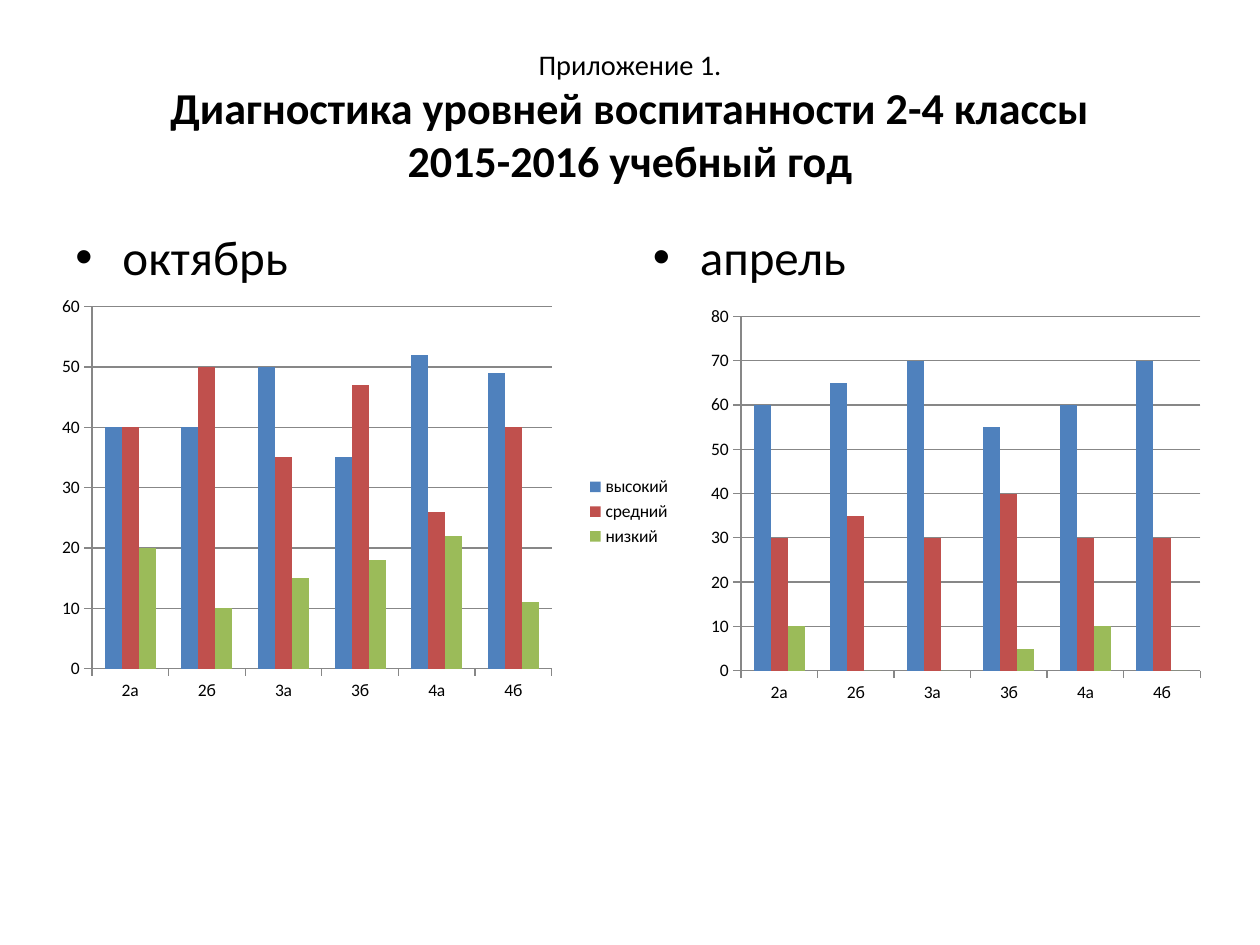
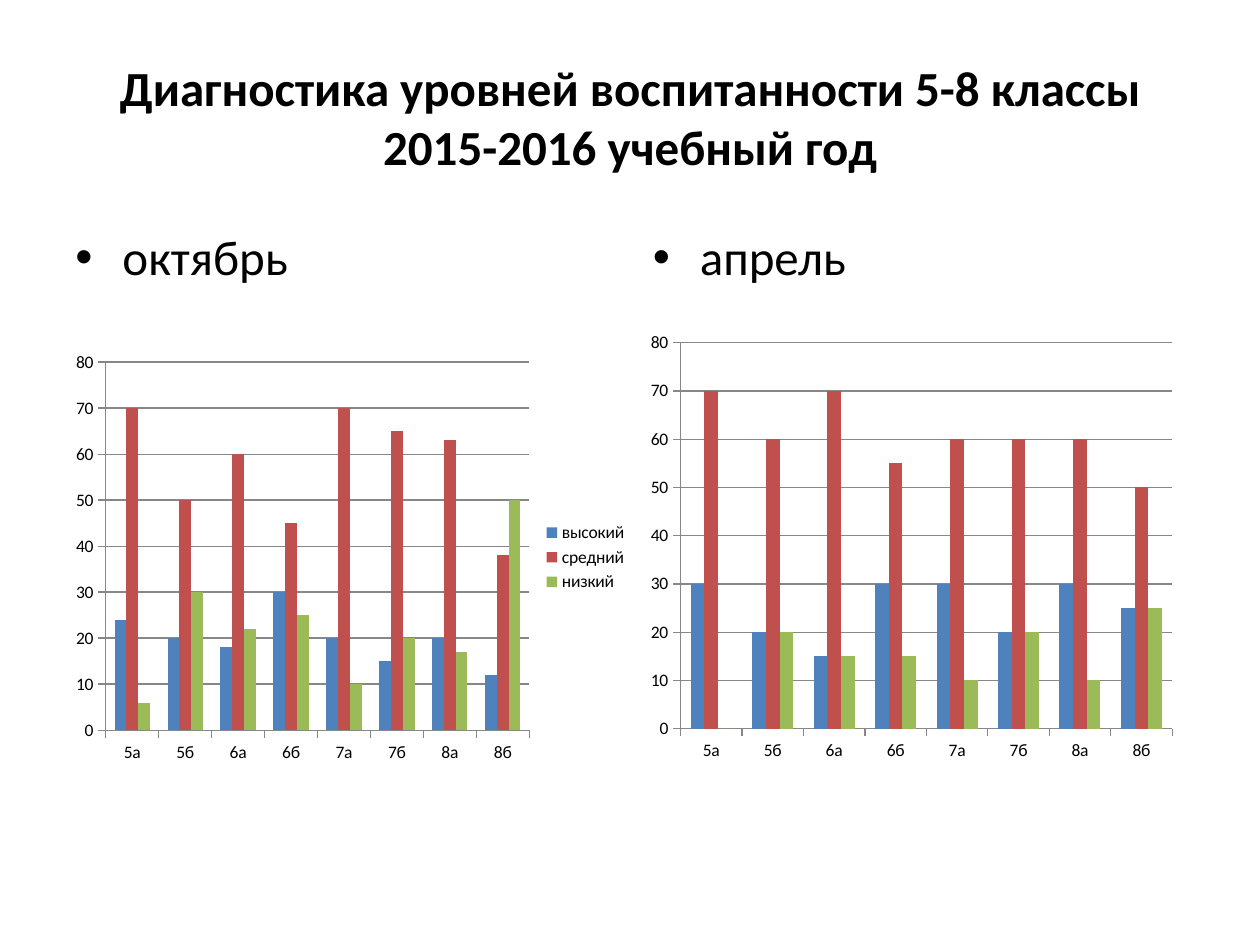
from copy import deepcopy

from lxml import etree
from pptx import Presentation
from pptx.chart.data import CategoryChartData
from pptx.dml.color import RGBColor
from pptx.enum.chart import XL_CHART_TYPE, XL_LEGEND_POSITION, XL_TICK_MARK
from pptx.enum.text import MSO_ANCHOR, MSO_AUTO_SIZE, PP_ALIGN
from pptx.oxml import parse_xml
from pptx.oxml.ns import nsdecls, qn
from pptx.util import Cm, Pt

COLUMNS = XL_CHART_TYPE.COLUMN_CLUSTERED
LEGEND_RIGHT = XL_LEGEND_POSITION.RIGHT
TICK_OUT, TICK_NONE = XL_TICK_MARK.OUTSIDE, XL_TICK_MARK.NONE
MIDDLE, TOP = MSO_ANCHOR.MIDDLE, MSO_ANCHOR.TOP
NO_AUTOFIT = MSO_AUTO_SIZE.NONE
CENTER = PP_ALIGN.CENTER

FONT = "Calibri"
COLORS = {
    "text": "000000",
    "grid": "878787",
    "высокий": "4F81BD",
    "средний": "C0504D",
    "низкий": "9BBB59",
}
LEVELS = ("высокий", "средний", "низкий")
TITLE_BOX = (1.27, 0.76, 22.86, 3.18)
MONTH_BOXES = {"октябрь": (1.27, 4.45, 11.22, 1.6), "апрель": (12.91, 4.45, 11.22, 1.6)}
YEAR = "2015-2016 учебный год"


def color(name):
    return RGBColor.from_string(COLORS[name])


class Deck:
    """Holds the shared style and the current slide."""

    def __init__(self):
        self.prs = Presentation()
        self.prs.slide_width, self.prs.slide_height = Cm(25.4), Cm(19.05)
        self.slide = None

    def new_slide(self):
        self.slide = self.prs.slides.add_slide(self.prs.slide_layouts[5])

    def style(self, font, size, bold=False):
        values = {"name": FONT, "size": Pt(size), "bold": bold}
        for attribute, value in values.items():
            setattr(font, attribute, value)
        font.color.rgb = color("text")

    def frame(self, shape, anchor):
        values = {"word_wrap": True, "auto_size": NO_AUTOFIT, "vertical_anchor": anchor}
        for attribute, value in values.items():
            setattr(shape.text_frame, attribute, value)
        return shape.text_frame.paragraphs[0]

    def title(self, lines):
        """Write (text, size, bold) lines into the title placeholder."""
        heading = self.slide.shapes.title
        heading.left, heading.top, heading.width, heading.height = map(Cm, TITLE_BOX)
        paragraph = self.frame(heading, MIDDLE)
        paragraph.alignment = CENTER
        for number, (text, size, bold) in enumerate(lines):
            if number:
                paragraph.add_line_break()
            run = paragraph.add_run()
            run.text = text
            self.style(run.font, size, bold)
        # Each line break takes the format of the line it ends
        for line_break in paragraph._p.findall(qn("a:br")):
            line_break.append(deepcopy(line_break.getprevious().find(qn("a:rPr"))))

    def month(self, name):
        """Add a bulleted month heading."""
        label = self.slide.shapes.add_textbox(*map(Cm, MONTH_BOXES[name]))
        paragraph = self.frame(label, TOP)
        paragraph.space_before = Pt(5.6)
        run = paragraph.add_run()
        run.text = name
        self.style(run.font, 28)
        props = paragraph._p.get_or_add_pPr()
        props.set("marL", str(Cm(0.95)))
        props.set("indent", str(Cm(-0.95)))
        etree.SubElement(props, qn("a:buFont"), typeface="Arial")
        etree.SubElement(props, qn("a:buChar"), char="•")

    def chart(self, box, classes, values, top_value, legend=False, plot_area=None):
        """Add a clustered column chart with one series per level."""
        data = CategoryChartData()
        data.categories = classes
        for level, shares in zip(LEVELS, values):
            data.add_series(level, shares)
        chart = self.slide.shapes.add_chart(COLUMNS, *map(Cm, box), data).chart
        self.style(chart.font, 10)
        chart.has_title = False
        chart.has_legend = legend
        if legend:
            chart.legend.position = LEGEND_RIGHT
            chart.legend.include_in_layout = False

        # Columns
        plot = chart.plots[0]
        for attribute, value in {"gap_width": 150, "overlap": 0, "vary_by_categories": False}.items():
            setattr(plot, attribute, value)
        for level, series in zip(LEVELS, plot.series):
            series.format.fill.solid()
            series.format.fill.fore_color.rgb = color(level)

        # Axes
        scale = chart.value_axis
        for attribute, value in {"minimum_scale": 0, "maximum_scale": top_value,
                                 "major_unit": 10, "has_major_gridlines": True}.items():
            setattr(scale, attribute, value)
        chart.category_axis.has_major_gridlines = False
        for axis in (chart.category_axis, scale):
            axis.major_tick_mark, axis.minor_tick_mark = TICK_OUT, TICK_NONE
        for part in (chart.category_axis, scale, scale.major_gridlines):
            part.format.line.color.rgb = color("grid")
            part.format.line.width = Pt(0.75)

        # Clear background, so that neighbouring charts may overlap
        space = chart._chartSpace
        space.find(qn("c:chart")).addnext(parse_xml(
            f'<c:spPr {nsdecls("c", "a")}><a:noFill/><a:ln><a:noFill/></a:ln></c:spPr>'))
        if plot_area:
            self.place_plot(space, plot_area)

    def place_plot(self, space, fractions):
        """Fix the inner plot area as fractions of the chart."""
        area = space.find(".//" + qn("c:plotArea"))
        for old in area.findall(qn("c:layout")):
            area.remove(old)
        layout = etree.Element(qn("c:layout"))
        manual = etree.SubElement(layout, qn("c:manualLayout"))
        settings = [("layoutTarget", "inner"), ("xMode", "edge"), ("yMode", "edge")]
        settings += zip("xywh", fractions)
        for tag, value in settings:
            etree.SubElement(manual, qn("c:" + tag), val=str(value))
        area.insert(0, layout)


def main():
    deck = Deck()

    # Classes 2-4
    deck.new_slide()
    deck.title([("Приложение 1.", 16.2, False),
                ("Диагностика уровней воспитанности 2-4 классы", 25.2, True),
                (YEAR, 25.2, True)])
    for month in MONTH_BOXES:
        deck.month(month)
    junior = ("2а", "2б", "3а", "3б", "4а", "4б")
    deck.chart((1.09, 5.92, 12.7, 8.79), junior,
               [(40, 40, 50, 35, 52, 49), (40, 50, 35, 47, 26, 40), (20, 10, 15, 18, 22, 11)],
               60, legend=True, plot_area=(0.06, 0.03, 0.73, 0.83))
    deck.chart((11.51, 6.12, 12.7, 8.61), junior,
               [(60, 65, 70, 55, 60, 70), (30, 35, 30, 40, 30, 30), (10, 0, 0, 5, 10, 0)],
               80, plot_area=(0.27, 0.03, 0.73, 0.83))

    # Classes 5-8
    deck.new_slide()
    deck.title([("Диагностика уровней воспитанности 5-8 классы", 28, True), (YEAR, 28, True)])
    for month in MONTH_BOXES:
        deck.month(month)
    senior = ("5а", "5б", "6а", "6б", "7а", "7б", "8а", "8б")
    deck.chart((1.3, 6.93, 11.61, 8.61), senior,
               [(24, 20, 18, 30, 20, 15, 20, 12), (70, 50, 60, 45, 70, 65, 63, 38),
                (6, 30, 22, 25, 10, 20, 17, 50)], 80, legend=True)
    deck.chart((12.9, 6.53, 10.95, 8.99), senior,
               [(30, 20, 15, 30, 30, 20, 30, 25), (70, 60, 70, 55, 60, 60, 60, 50),
                (0, 20, 15, 15, 10, 20, 10, 25)], 80)

    deck.prs.save("out.pptx")


if __name__ == "__main__":
    main()
